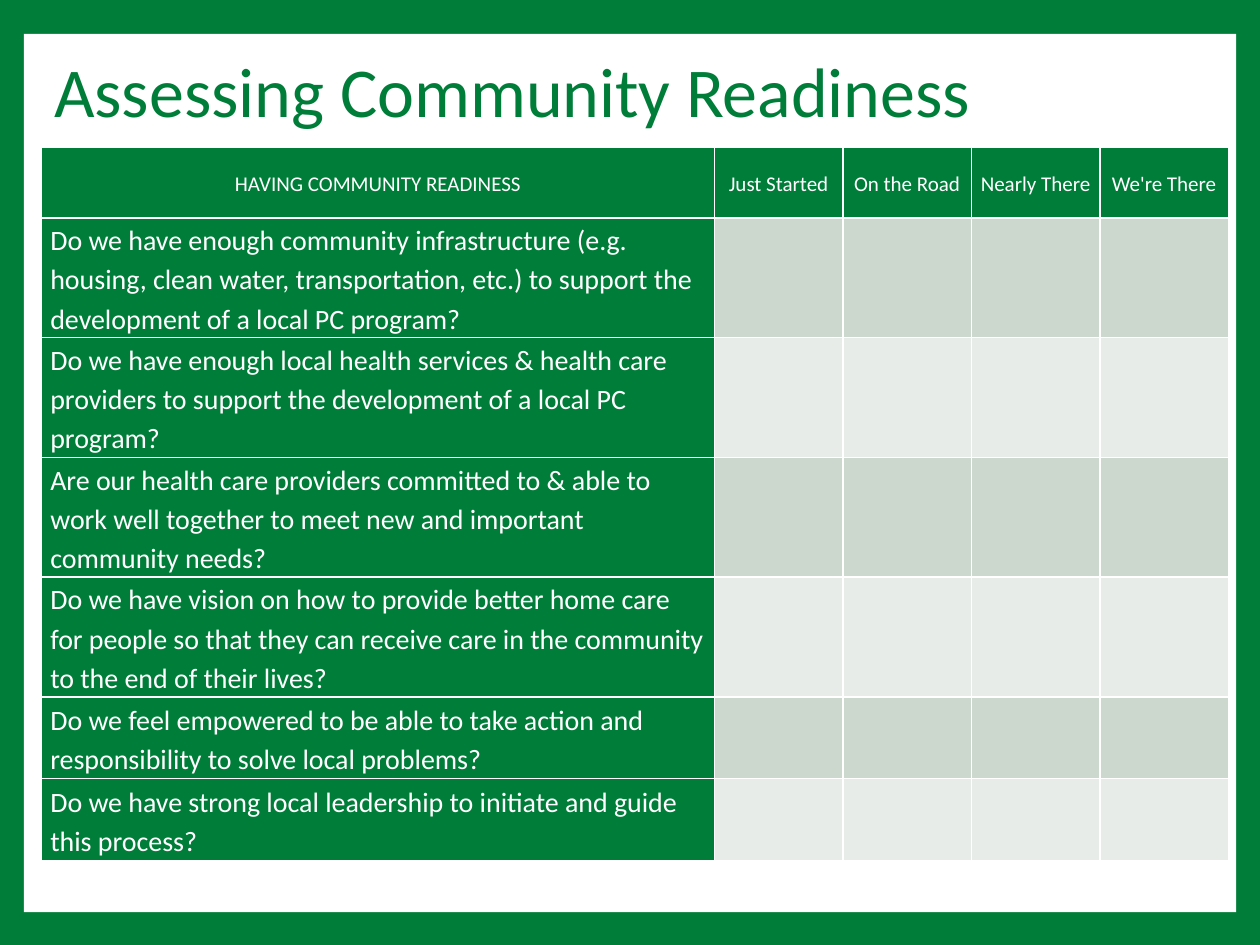
from lxml.etree import SubElement
from pptx import Presentation
from pptx.dml.color import RGBColor
from pptx.enum.shapes import MSO_SHAPE
from pptx.enum.text import MSO_ANCHOR, PP_ALIGN
from pptx.oxml.ns import qn
from pptx.util import Inches, Pt

GREEN, WHITE = "007E39", "FFFFFF"
BANDS = ["CCD8CE", "E7ECE8"]
HEADINGS = ["HAVING COMMUNITY READINESS", "Just Started", "On the Road",
            "Nearly There", "We're There"]
QUESTIONS = [
    "Do we have enough community infrastructure (e.g. housing, clean water, "
    "transportation, etc.) to support the development of a local PC program?",
    "Do we have enough local health services & health care providers to support "
    "the development of a local PC program?",
    "Are our health care providers committed to & able to work well together to "
    "meet new and important community needs?",
    "Do we have vision on how to provide better home care for people so that they "
    "can receive care in the community to the end of their lives?",
    "Do we feel empowered to be able to take action and responsibility to solve "
    "local problems?",
    "Do we have strong local leadership to initiate and guide this process?",
]
COLUMN_WIDTHS = [5.34] + [1.02] * 4
ROW_HEIGHTS = [0.56] + [0.95] * 4 + [0.65] * 2


def paint(fill, color):
    fill.solid()
    fill.fore_color.rgb = RGBColor.from_string(color)


def write(frame, text, size, color, align=PP_ALIGN.LEFT, line=1.15, gap=0):
    """Fill a text frame with one formatted paragraph."""
    para = frame.paragraphs[0]
    para.alignment = align
    para.line_spacing = line
    para.space_before = para.space_after = Pt(gap)
    span = para.add_run()
    span.text = text
    span.font.name = "Calibri"
    span.font.size = Pt(size)
    span.font.bold = False
    span.font.color.rgb = RGBColor.from_string(color)


def add_borders(cell, color=WHITE, width=1):
    properties = cell._tc.get_or_add_tcPr()
    for side in ("lnL", "lnR", "lnT", "lnB"):
        border = SubElement(properties, qn(f"a:{side}"), w=str(Pt(width)))
        solid = SubElement(border, qn("a:solidFill"))
        SubElement(solid, qn("a:srgbClr"), val=color)


def style_cell(cell, color):
    add_borders(cell)  # borders come before the fill in the cell properties
    paint(cell.fill, color)
    cell.vertical_anchor = MSO_ANCHOR.MIDDLE
    cell.margin_left = cell.margin_right = Inches(0.07)
    cell.margin_top = cell.margin_bottom = 0


def add_title(page, text):
    title = page.shapes.title
    title.left, title.top = Inches(0.33), Inches(0.17)
    title.width, title.height = Inches(9.67), Inches(1.17)
    title.text_frame.vertical_anchor = MSO_ANCHOR.MIDDLE
    write(title.text_frame, text, 40, GREEN, line=0.9)


def add_panel(page):
    """White panel inside the green frame, placed behind the title."""
    panel = page.shapes.add_shape(MSO_SHAPE.RECTANGLE, Inches(0.19), Inches(0.27),
                                  Inches(9.62), Inches(6.97))
    panel.shadow.inherit = False
    paint(panel.fill, WHITE)
    panel.line.fill.background()
    page.shapes.title.element.addprevious(panel.element)


def add_checklist(page):
    table = page.shapes.add_table(
        len(ROW_HEIGHTS), len(COLUMN_WIDTHS), Inches(0.33), Inches(1.17),
        Inches(sum(COLUMN_WIDTHS)), Inches(sum(ROW_HEIGHTS))).table
    for column, width in zip(table.columns, COLUMN_WIDTHS):
        column.width = Inches(width)
    for row, height in zip(table.rows, ROW_HEIGHTS):
        row.height = Inches(height)

    # Header row
    for index, heading in enumerate(HEADINGS):
        cell = table.cell(0, index)
        style_cell(cell, GREEN)
        write(cell.text_frame, heading, 12, WHITE, align=PP_ALIGN.CENTER)

    # Questions, each followed by banded answer cells
    for index, question in enumerate(QUESTIONS):
        first, *answers = table.rows[index + 1].cells
        style_cell(first, GREEN)
        write(first.text_frame, question, 16, WHITE, gap=6 if index else 12)
        for cell in answers:
            style_cell(cell, BANDS[index % 2])


def main():
    deck = Presentation()
    deck.slide_width, deck.slide_height = Inches(10), Inches(7.5)
    page = deck.slides.add_slide(deck.slide_layouts[5])
    paint(page.background.fill, GREEN)
    add_title(page, "Assessing Community Readiness")
    add_panel(page)
    add_checklist(page)
    deck.save("out.pptx")


if __name__ == "__main__":
    main()
